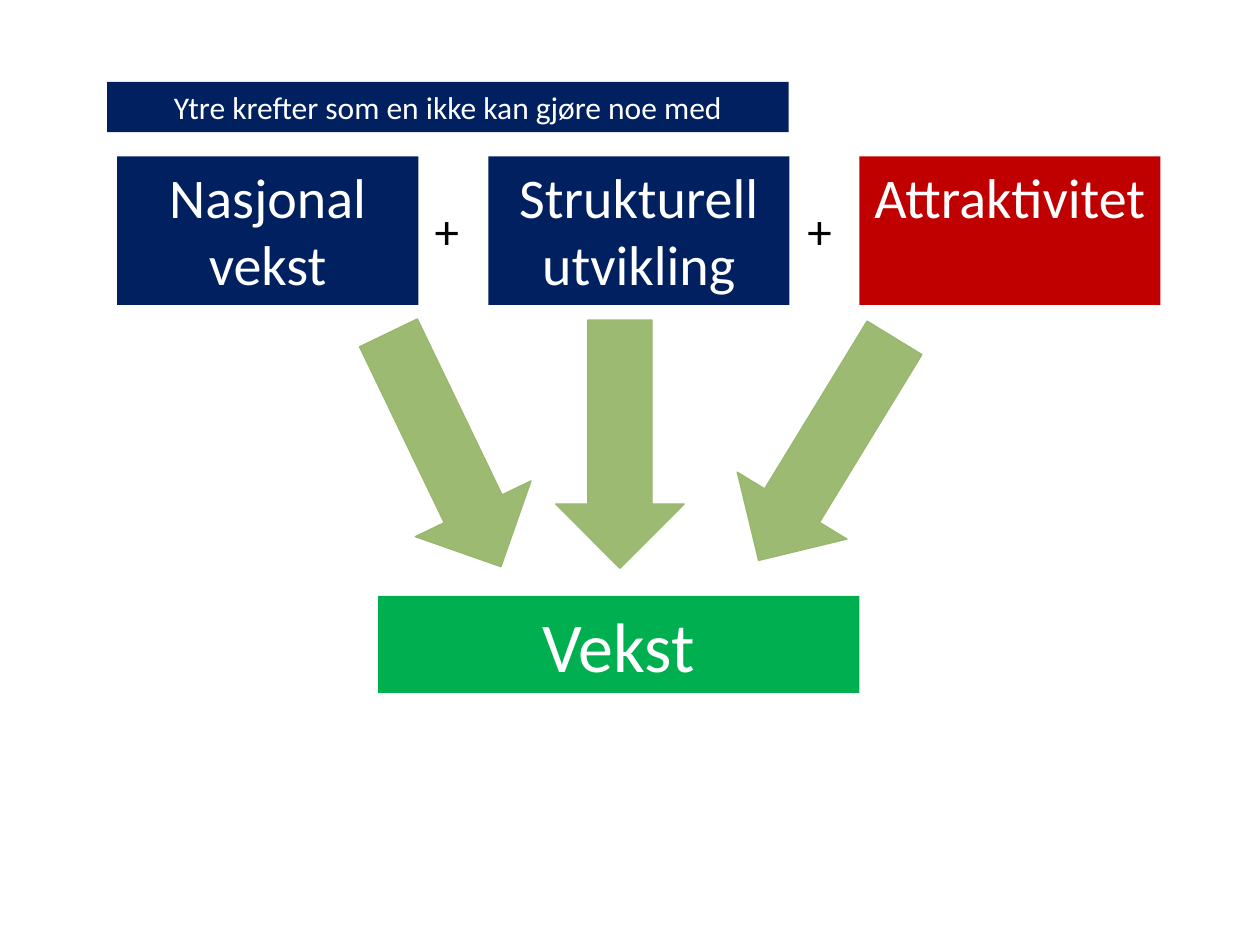
from pptx import Presentation
from pptx.dml.color import RGBColor
from pptx.enum.shapes import MSO_SHAPE
from pptx.enum.text import MSO_ANCHOR, PP_ALIGN
from pptx.util import Inches, Pt

HUES = {
    "navy": "002060",
    "red": "C00000",
    "green": "00B050",
    "leaf": "9CBA72",
    "edge": "99B86E",
    "white": "FFFFFF",
    "black": "000000",
}


def hue(name):
    return RGBColor.from_string(HUES[name])


def write(shape, text, size, color, align):
    frame = shape.text_frame
    frame.word_wrap = True
    frame.vertical_anchor = MSO_ANCHOR.TOP
    para = frame.paragraphs[0]
    para.alignment = align
    run = para.add_run()
    run.text = text
    run.font.name = "Calibri"
    run.font.size = Pt(size)
    run.font.color.rgb = hue(color)


def add_form(slide, kind, area, fill):
    shape = slide.shapes.add_shape(kind, *map(Inches, area))
    shape.shadow.inherit = False
    shape.fill.solid()
    shape.fill.fore_color.rgb = hue(fill)
    return shape


def add_box(slide, text, area, fill, size):
    box = add_form(slide, MSO_SHAPE.RECTANGLE, area, fill)
    box.line.fill.background()
    write(box, text, size, "white", PP_ALIGN.CENTER)


def add_arrow(slide, area, turn):
    arrow = add_form(slide, MSO_SHAPE.DOWN_ARROW, area, "leaf")
    arrow.line.color.rgb = hue("edge")
    arrow.line.width = Pt(0.75)
    arrow.rotation = turn


def add_plus(slide, left):
    area = (left, 1.54, 0.49, 0.57)
    plus = slide.shapes.add_textbox(*map(Inches, area))
    write(plus, "+", 28, "black", PP_ALIGN.LEFT)


def main():
    deck = Presentation()
    deck.slide_width = Inches(10)
    deck.slide_height = Inches(7.5)
    slide = deck.slides.add_slide(deck.slide_layouts[6])

    causes = [
        ("Nasjonal vekst", "navy"),
        ("Strukturell utvikling", "navy"),
        ("Attraktivitet", "red"),
    ]
    for i, (text, fill) in enumerate(causes):
        left = 0.93 + i * 2.945
        add_box(slide, text, (left, 1.24, 2.39, 1.18), fill, 32)

    add_arrow(slide, (3.02, 2.54, 1.02, 2.06), 334.3)
    add_box(slide, "Vekst", (3, 4.73, 3.82, 0.77), "green", 40)
    add_arrow(slide, (6.05, 2.53, 1.02, 2.07), 31.4)
    add_arrow(slide, (4.41, 2.54, 1.02, 1.97), 0)

    for left in (3.35, 6.31):
        add_plus(slide, left)

    note = "Ytre krefter som en ikke kan gjøre noe med"
    add_box(slide, note, (0.85, 0.65, 5.41, 0.4), "navy", 18)

    deck.save("out.pptx")


if __name__ == "__main__":
    main()
